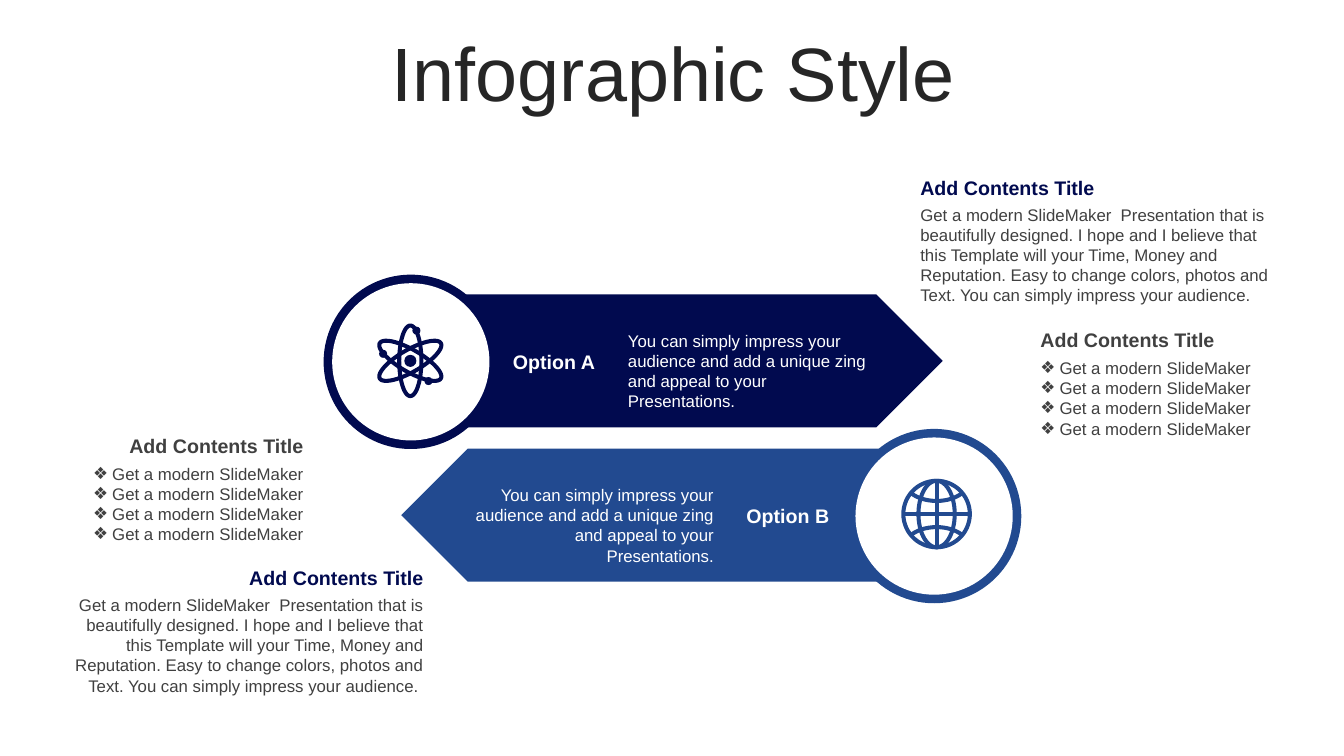
from dataclasses import dataclass
from math import cos, pi, radians, sin

from lxml import etree
from pptx import Presentation
from pptx.dml.color import RGBColor
from pptx.enum.shapes import MSO_SHAPE as Shape
from pptx.enum.text import MSO_ANCHOR as Anchor, MSO_AUTO_SIZE as AutoSize, PP_ALIGN as Align
from pptx.oxml.ns import qn
from pptx.util import Inches, Pt

NAVY, BLUE, WHITE, GREY, BLACK = "010A4F", "224A90", "FFFFFF", "404040", "262626"
FONT = "Arial"
STROKE = 2.9
ARROW_W, ARROW_H = 5.28, 1.32
RING_D, DISC_D = 1.73, 1.56

TEASER = ("You can simply impress your audience and add a unique zing "
          "and appeal to your Presentations.")
BLURB = ("Get a modern SlideMaker  Presentation that is beautifully designed. "
         "I hope and I believe that this Template will your Time, Money and Reputation. "
         "Easy to change colors, photos and Text. You can simply impress your audience.")
BULLETS = ["Get a modern SlideMaker"] * 4

Point = tuple[float, float]


@dataclass
class Option:
    label: str
    color: str
    arrow_x: float
    arrow_y: float
    ring_x: float
    label_x: float
    teaser_x: float
    mirrored: bool


@dataclass
class Block:
    x: float
    y: float
    w: float
    body_y: float
    body_h: float
    body: list[str]
    title_color: str
    align: Align
    bulleted: bool


OPTIONS = [
    Option("Option A", NAVY, 4.07, 2.92, 3.21, 4.85, 6.13, False),
    Option("Option B", BLUE, 3.98, 4.45, 8.4, 7.17, 4.52, True),
]
BLOCKS = [
    Block(9.03, 1.7, 3.67, 1.98, 1.11, [BLURB], NAVY, Align.LEFT, False),
    Block(10.22, 3.2, 2.48, 3.5, 0.91, BULLETS, GREY, Align.LEFT, True),
    Block(0.63, 5.57, 3.67, 5.85, 1.11, [BLURB + " "], NAVY, Align.RIGHT, False),
    Block(0.63, 4.26, 2.48, 4.55, 0.91, BULLETS, GREY, Align.RIGHT, True),
]


def rgb(color: str) -> RGBColor:
    return RGBColor.from_string(color)


def add_run(p, text: str, size: float, color: str, bold: bool = False) -> None:
    r = p.add_run()
    r.text = text
    r.font.name, r.font.size, r.font.bold = FONT, Pt(size), bold
    r.font.color.rgb = rgb(color)


def add_bullet(p) -> None:
    pPr = p._p.get_or_add_pPr()
    pPr.set("marL", str(Inches(0.19)))
    pPr.set("indent", str(-Inches(0.19)))
    etree.SubElement(pPr, qn("a:buFont")).set("typeface", FONT)
    etree.SubElement(pPr, qn("a:buChar")).set("char", "❖")


def add_text(s, x: float, y: float, w: float, h: float, lines: list[str], size: float,
             color: str, align: Align, bold: bool = False, bulleted: bool = False) -> None:
    tf = s.shapes.add_textbox(Inches(x), Inches(y), Inches(w), Inches(h)).text_frame
    tf.word_wrap = True
    tf.auto_size = AutoSize.SHAPE_TO_FIT_TEXT
    for i, line in enumerate(lines):
        p = tf.add_paragraph() if i else tf.paragraphs[0]
        p.alignment = align
        if bulleted:
            add_bullet(p)
        add_run(p, line, size, color, bold)


def add_solid(s, kind: Shape, x: float, y: float, w: float, h: float, color: str):
    sp = s.shapes.add_shape(kind, Inches(x), Inches(y), Inches(w), Inches(h))
    sp.shadow.inherit = False
    sp.fill.solid()
    sp.fill.fore_color.rgb = rgb(color)
    sp.line.fill.background()
    return sp


def add_dot(s, cx: float, cy: float, radius: float, color: str) -> None:
    add_solid(s, Shape.OVAL, cx - radius, cy - radius, 2 * radius, 2 * radius, color)


def arc(cx: float, cy: float, rx: float, ry: float, start: float = 0,
        end: float = 360, tilt: float = 0) -> list[Point]:
    """Points along an ellipse from start to end, in degrees, turned by tilt."""
    t, steps = radians(tilt), 60
    points = []
    for i in range(steps + 1):
        a = radians(start + (end - start) * i / steps)
        dx, dy = rx * cos(a), ry * sin(a)
        points.append((cx + dx * cos(t) - dy * sin(t), cy + dx * sin(t) + dy * cos(t)))
    return points


def add_strokes(s, contours: list[list[Point]], color: str) -> None:
    paths = [[(Inches(x), Inches(y)) for x, y in c] for c in contours]
    builder = s.shapes.build_freeform(*paths[0][0])
    for i, points in enumerate(paths):
        if i:
            builder.move_to(*points[0])
        builder.add_line_segments(points[1:], close=False)
    sp = builder.convert_to_shape()
    sp.shadow.inherit = False
    sp.fill.background()
    sp.line.color.rgb = rgb(color)
    sp.line.width = Pt(STROKE)


def add_globe(s, cx: float, cy: float, color: str) -> None:
    r = 0.33
    add_strokes(s, [
        arc(cx, cy, r, r),
        arc(cx, cy, 0.18, r),
        [(cx - r, cy), (cx + r, cy)],
        [(cx, cy - r), (cx, cy + r)],
        arc(cx, cy - r, 0.32, 0.2, 38, 142),
        arc(cx, cy + r, 0.32, 0.2, 218, 322),
    ], color)


def add_atom(s, cx: float, cy: float, color: str) -> None:
    add_strokes(s, [arc(cx, cy, 0.11, 0.35, tilt=tilt) for tilt in (0, 60, 120)], color)
    add_dot(s, cx, cy, 0.06, color)
    for dx, dy in ((0.06, -0.3), (-0.27, -0.07), (0.18, 0.2)):
        add_dot(s, cx + dx, cy + dy, 0.04, color)


def add_option(s, o: Option) -> None:
    arrow = add_solid(s, Shape.PENTAGON, o.arrow_x, o.arrow_y, ARROW_W, ARROW_H, o.color)
    if o.mirrored:
        arrow._element.spPr.xfrm.set("flipH", "1")
    cx, cy = o.ring_x + RING_D / 2, o.arrow_y + ARROW_H / 2 + 0.01
    add_dot(s, cx, cy, RING_D / 2, o.color)
    add_dot(s, cx, cy, DISC_D / 2, WHITE)
    add_text(s, o.label_x, o.arrow_y + 0.5, 1.29, 0.34, [o.label], 14, WHITE,
             Align.CENTER, bold=True)
    add_text(s, o.teaser_x, o.arrow_y + 0.31, 2.66, 0.71, [TEASER], 12, WHITE,
             Align.RIGHT if o.mirrored else Align.LEFT)


def add_title(s, text: str) -> None:
    title = s.shapes.title
    title.left, title.top = Inches(0.35), Inches(0.37)
    title.width, title.height = Inches(12.66), Inches(0.79)
    tf = title.text_frame
    tf.word_wrap = True
    tf.auto_size = AutoSize.NONE
    tf.vertical_anchor = Anchor.MIDDLE
    p = tf.paragraphs[0]
    p.alignment, p.line_spacing, p.space_before = Align.CENTER, 0.9, Pt(10)
    add_run(p, text, 54, BLACK)


def main() -> None:
    prs = Presentation()
    prs.slide_width, prs.slide_height = Inches(13.33), Inches(7.5)
    s = prs.slides.add_slide(prs.slide_layouts[5])
    add_title(s, "Infographic Style")

    # Arrows with their rings, labels and icons
    for option in OPTIONS:
        add_option(s, option)
    add_atom(s, 4.07, 3.58, NAVY)
    add_globe(s, 9.29, 5.1, BLUE)

    # Titled text blocks on both sides
    for b in BLOCKS:
        add_text(s, b.x, b.body_y, b.w, b.body_h, b.body, 12, GREY, b.align,
                 bulleted=b.bulleted)
        add_text(s, b.x, b.y, b.w, 0.34, ["Add Contents Title"], 14, b.title_color,
                 b.align, bold=True)

    prs.save("out.pptx")


if __name__ == "__main__":
    main()
